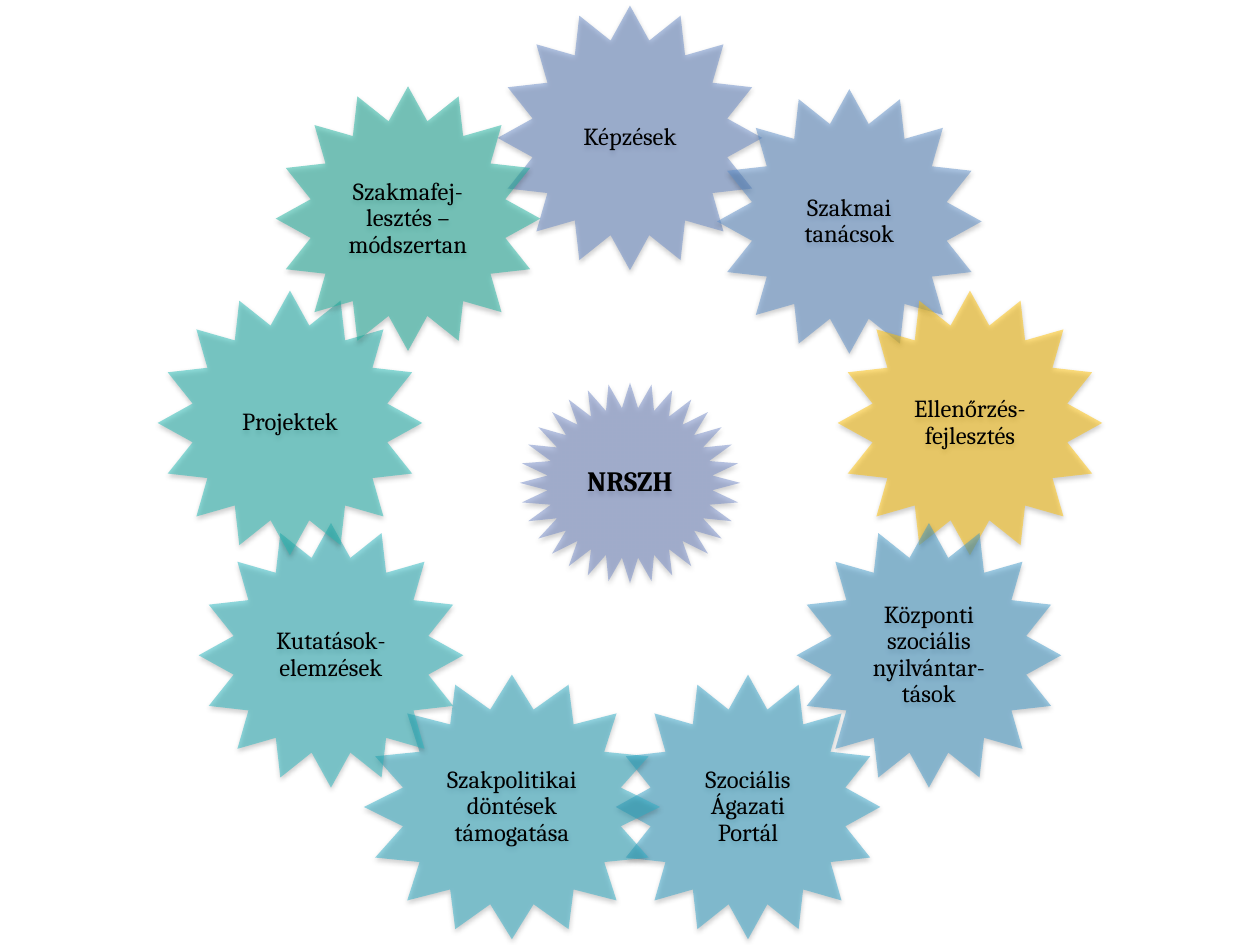
"""Build a slide with a ring of nine coloured stars around a central hub."""
import math
from dataclasses import dataclass

from lxml import etree
from pptx import Presentation
from pptx import util as u
from pptx.dml.color import RGBColor
from pptx.enum import shapes, text
from pptx.oxml import ns


@dataclass(frozen=True)
class Theme:
    """Hold the colours, font and type sizes."""
    font: str = "Cambria"
    ink: str = "000000"
    hub: str = "738AC8"
    label_size: int = 14
    hub_size: int = 16
    fill_opacity: int = 50
    shadow_opacity: int = 38


@dataclass(frozen=True)
class Topic:
    """Describe one star; width and shift are shares of the slide's size."""
    label: str
    colour: str
    width: float = 0.21
    shift: tuple = (0, 0)


TOPICS = [
    Topic("Képzések", "678AC8"),
    Topic("Szakmai tanácsok", "5A8DC9", shift=(-0.002, 0.003)),
    Topic("Ellenőrzés-fejlesztés", "FFC000"),
    Topic("Központi szociális nyilvántar-tások", "3F9ACB"),
    Topic("Szociális Ágazati Portál", "32A5CC"),
    Topic("Szakpolitikai döntések támogatása", "2BAEC7", width=0.235),
    Topic("Kutatások-elemzések", "25B7C0"),
    Topic("Projektek", "1FBAB4"),
    Topic("Szakmafej-lesztés – módszertan", "1AB39F"),
]
CENTRE = (0.5, 0.511)
RADIUS = (0.274, 0.365)
STAR_HEIGHT = 0.28
HUB_SIZE = (0.175, 0.212)


class SlideBuilder:
    """Draw styled elements, placed by shares of the slide's size."""

    def __init__(self, presentation, theme):
        """Add a blank slide to draw on."""
        self.theme = theme
        self.width = presentation.slide_width
        self.height = presentation.slide_height
        self.slide = presentation.slides.add_slide(presentation.slide_layouts[6])

    def add_alpha(self, colour, percent):
        """Make a colour element partly transparent."""
        etree.SubElement(colour, ns.qn("a:alpha"), val=str(percent * 1000))

    def add_shadow(self, shape):
        """Give a shape a soft shadow that falls straight down."""
        shape.shadow.inherit = False
        effects = shape.element.spPr.find(ns.qn("a:effectLst"))
        shadow = etree.SubElement(
            effects, ns.qn("a:outerShdw"), blurRad=str(u.Pt(3.1)),
            dist=str(u.Pt(1.6)), dir="5400000", rotWithShape="0")
        colour = etree.SubElement(shadow, ns.qn("a:srgbClr"), val=self.theme.ink)
        self.add_alpha(colour, self.theme.shadow_opacity)

    def add_star(self, kind, centre, size, colour, label, points, bold=False):
        """Draw a translucent star with a centred label."""
        (x, y), (width, height) = centre, size
        shape = self.slide.shapes.add_shape(
            kind, round((x - width / 2) * self.width),
            round((y - height / 2) * self.height),
            round(width * self.width), round(height * self.height))
        shape.fill.solid()
        shape.fill.fore_color.rgb = RGBColor.from_string(colour)
        fill_colour = shape.element.spPr.find(ns.qn("a:solidFill"))[0]
        self.add_alpha(fill_colour, self.theme.fill_opacity)
        shape.line.fill.background()
        self.add_shadow(shape)
        self.add_label(shape.text_frame, label, points, bold)

    def add_label(self, frame, label, points, bold):
        """Set the text of a star."""
        frame.word_wrap = True
        frame.vertical_anchor = text.MSO_ANCHOR.MIDDLE
        frame.margin_left = frame.margin_right = u.Inches(0.02)
        frame.margin_top = frame.margin_bottom = u.Inches(0.02)
        paragraph = frame.paragraphs[0]
        paragraph.text = label
        paragraph.alignment = text.PP_ALIGN.CENTER
        paragraph.line_spacing = 0.9
        paragraph.font.name = self.theme.font
        paragraph.font.size = u.Pt(points)
        paragraph.font.bold = bold
        paragraph.font.color.rgb = RGBColor.from_string(self.theme.ink)

    def add_ring(self, topics):
        """Place the topics clockwise from the top at equal angles."""
        for index, topic in enumerate(topics):
            angle = math.tau * index / len(topics)
            centre = (CENTRE[0] + RADIUS[0] * math.sin(angle) + topic.shift[0],
                      CENTRE[1] - RADIUS[1] * math.cos(angle) + topic.shift[1])
            self.add_star(shapes.MSO_SHAPE.STAR_16_POINT, centre,
                          (topic.width, STAR_HEIGHT), topic.colour,
                          topic.label, self.theme.label_size)


def main():
    """Build and save the presentation."""
    presentation = Presentation()
    presentation.slide_width = u.Inches(10)
    presentation.slide_height = u.Inches(7.5)
    theme = Theme()
    builder = SlideBuilder(presentation, theme)
    builder.add_star(shapes.MSO_SHAPE.STAR_32_POINT, CENTRE, HUB_SIZE,
                     theme.hub, "NRSZH", theme.hub_size, bold=True)
    builder.add_ring(TOPICS)
    presentation.save("out.pptx")


if __name__ == "__main__":
    main()
